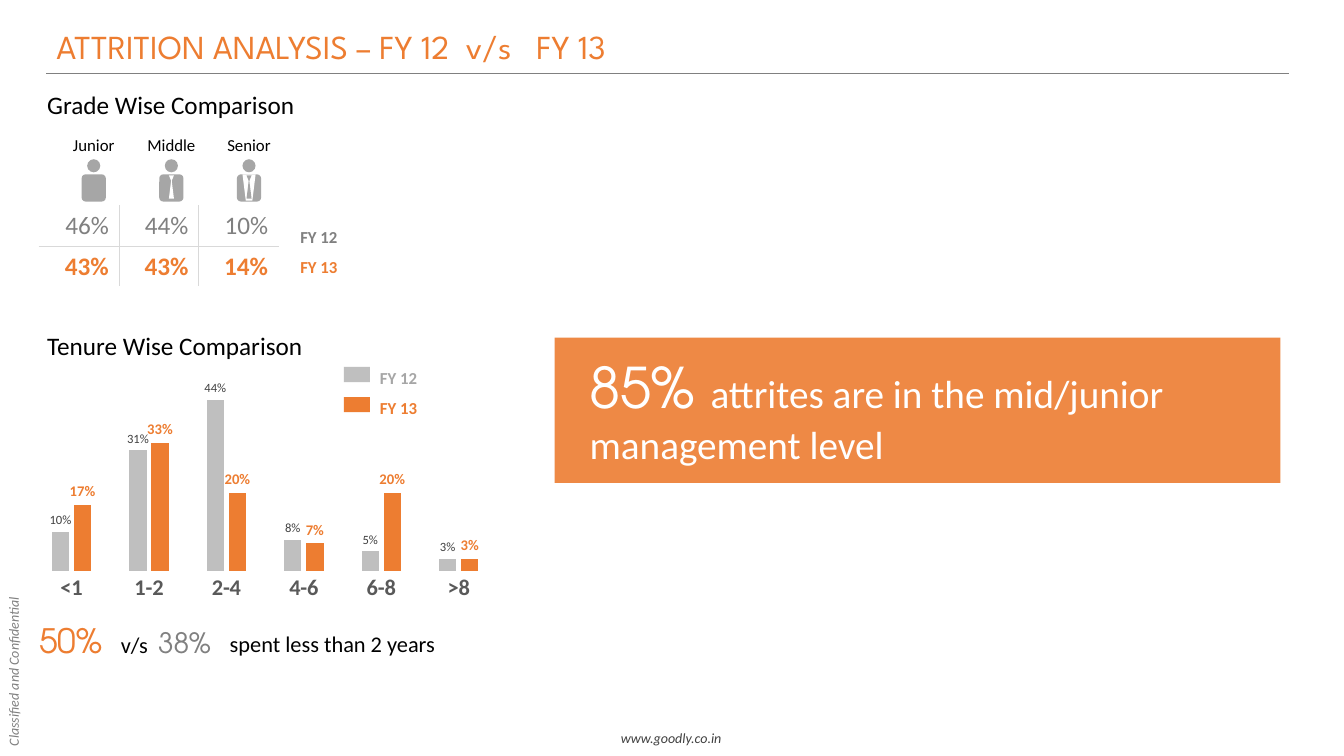
from lxml import etree
from pptx import Presentation
from pptx.chart.data import CategoryChartData
from pptx.dml.color import RGBColor
from pptx.enum.chart import XL_CHART_TYPE, XL_LABEL_POSITION, XL_TICK_MARK
from pptx.enum.shapes import MSO_CONNECTOR, MSO_SHAPE
from pptx.enum.text import MSO_ANCHOR, MSO_AUTO_SIZE, PP_ALIGN
from pptx.oxml.ns import qn
from pptx.util import Inches, Pt

ORANGE = RGBColor(0xED, 0x7D, 0x31)
GRAY = RGBColor(0x80, 0x80, 0x80)
ICON_GRAY = RGBColor(0xA6, 0xA6, 0xA6)
BAR_GRAY = RGBColor(0xBF, 0xBF, 0xBF)
RULE_GRAY = RGBColor(0xD9, 0xD9, 0xD9)
AXIS_GRAY = RGBColor(0x59, 0x59, 0x59)
DARK_GRAY = RGBColor(0x40, 0x40, 0x40)
BLACK = RGBColor(0, 0, 0)
WHITE = RGBColor(0xFF, 0xFF, 0xFF)
BODY_FONT = "Calibri"
TITLE_FONT = "League Spartan"
NUMBER_FONT = "TeX Gyre Adventor"
RECT, ROUND, OVAL = MSO_SHAPE.RECTANGLE, MSO_SHAPE.ROUNDED_RECTANGLE, MSO_SHAPE.OVAL
TRIANGLE, TRAPEZOID = MSO_SHAPE.ISOSCELES_TRIANGLE, MSO_SHAPE.TRAPEZOID
LEFT, CENTER, RIGHT = PP_ALIGN.LEFT, PP_ALIGN.CENTER, PP_ALIGN.RIGHT


def style(font, size, color, bold=False, italic=False, name=BODY_FONT):
    """Set every font property used on the slide."""
    font.size, font.name, font.bold, font.italic = Pt(size), name, bold, italic
    font.color.rgb = color


def add_tabs(para, stops):
    """Add left tab stops, in inches, to a paragraph."""
    tabs = etree.SubElement(para._p.get_or_add_pPr(), qn("a:tabLst"))
    for stop in stops:
        etree.SubElement(tabs, qn("a:tab"), pos=str(Inches(stop)), algn="l")


def add_text(slide, box, lines, size, wrap=True, align=LEFT, spacing=None, **look):
    """Add a text box with one paragraph for each (text, color) line."""
    shape = slide.shapes.add_textbox(*map(Inches, box))
    frame = shape.text_frame
    frame.word_wrap = wrap
    frame.auto_size = MSO_AUTO_SIZE.SHAPE_TO_FIT_TEXT
    for index, (text, color) in enumerate(lines):
        para = frame.add_paragraph() if index else frame.paragraphs[0]
        para.text, para.alignment = text, align
        if spacing:
            para.line_spacing = spacing
        style(para.font, size, color, **look)
    return shape


def add_spans(slide, box, spans, stops=()):
    """Add a text box whose single paragraph mixes (text, size, color, font) spans."""
    frame = slide.shapes.add_textbox(*map(Inches, box)).text_frame
    frame.word_wrap = True
    para = frame.paragraphs[0]
    if stops:
        add_tabs(para, stops)
    for text, size, color, name in spans:
        span = para.add_run()
        span.text = text
        style(span.font, size, color, name=name)


def add_solid(slide, kind, box, color, rotation=0):
    """Add a filled shape without outline or shadow."""
    shape = slide.shapes.add_shape(kind, *map(Inches, box))
    shape.shadow.inherit = False
    shape.fill.solid()
    shape.fill.fore_color.rgb = color
    shape.line.fill.background()
    shape.rotation = rotation
    return shape


def add_header(slide, box):
    """Fill the title and draw the rule below it."""
    left, top, width, height = box
    title = slide.shapes.title
    title.left, title.top = Inches(left), Inches(top)
    title.width, title.height = Inches(10.84), Inches(height)
    frame = title.text_frame
    frame.auto_size = MSO_AUTO_SIZE.NONE
    frame.vertical_anchor = MSO_ANCHOR.MIDDLE
    para = frame.paragraphs[0]
    para.text = "ATTRITION ANALYSIS – FY 12\tv/s\tFY 13"
    para.alignment, para.line_spacing = LEFT, 0.9
    add_tabs(para, (4.06, 4.76))
    style(para.font, 24, ORANGE, name=TITLE_FONT)
    rule_y = Inches(top + height + 0.02)
    rule = slide.shapes.add_connector(
        MSO_CONNECTOR.STRAIGHT, Inches(left), rule_y, Inches(left + width), rule_y)
    rule.line.color.rgb, rule.line.width = GRAY, Pt(0.5)
    etree.SubElement(rule._element.spPr, qn("a:effectLst"))


def add_footer(slide, box):
    """Add the web address and the sideways confidentiality note."""
    left, top, width, height = box
    add_text(slide, (left + 6.06, top, 1.22, height), [("www.goodly.co.in", DARK_GRAY)],
             10, wrap=False, italic=True)
    note = add_text(slide, (left - 0.71, top - 0.67, 1.69, height),
                    [("Classified and Confidential", GRAY)], 10, wrap=False, italic=True)
    note.rotation = 270


def add_person(slide, center, top, grade):
    """Draw the icon of a grade: 0 plain, 1 with tie, 2 with tie and jacket."""
    parts = [(OVAL, 0.13, 0, 0.13, ICON_GRAY, 0), (ROUND, 0.24, 0.15, 0.27, ICON_GRAY, 0)]
    if grade == 2:
        parts.append((TRAPEZOID, 0.13, 0.15, 0.26, WHITE, 180))
    if grade:
        tie = WHITE if grade == 1 else ICON_GRAY
        parts += [(TRIANGLE, 0.05, 0.19, 0.2, tie, 0), (TRIANGLE, 0.05, 0.16, 0.06, tie, 180)]
    for kind, width, drop, height, color, rotation in parts:
        add_solid(slide, kind, (center - width / 2, top + drop, width, height), color, rotation)


def set_borders(cell, row, column):
    """Draw the inner gray rules of the 2 by 3 grid and white outer edges."""
    inner = {"lnL": column > 0, "lnR": column < 2, "lnT": row > 0, "lnB": row < 1}
    for tag, is_inner in inner.items():
        line = etree.SubElement(cell._tc.get_or_add_tcPr(), qn(f"a:{tag}"),
                                w=str(Pt(0.5 if is_inner else 1)))
        fill = etree.SubElement(line, qn("a:solidFill"))
        etree.SubElement(fill, qn("a:srgbClr"), val=str(RULE_GRAY if is_inner else WHITE))


def add_grades(slide, box):
    """Add the grade comparison: heading, icons, table and row names."""
    left, top, width, height = box
    add_text(slide, (left, top, width, 0.4), [("Grade Wise Comparison", BLACK)], 18)
    for grade, name in enumerate(("Junior", "Middle", "Senior")):
        center = left + 0.56 + 0.77 * grade
        add_text(slide, (center - 0.34, top + 0.45, 0.68, 0.3), [(name, BLACK)],
                 12, wrap=False, align=CENTER)
        add_person(slide, center, top + 0.74, grade)
    rows = [(("46%", "44%", "10%"), GRAY, False), (("43%", "43%", "14%"), ORANGE, True)]
    table = slide.shapes.add_table(2, 3, Inches(left + 0.02), Inches(top + 1.2),
                                   Inches(2.37), Inches(0.8)).table
    table.first_row = table.horz_banding = False
    for row, (values, color, bold) in enumerate(rows):
        for column, value in enumerate(values):
            cell = table.cell(row, column)
            set_borders(cell, row, column)
            cell.fill.background()
            para = cell.text_frame.paragraphs[0]
            para.text, para.alignment = value, RIGHT
            style(para.font, 18, color, bold)
    add_text(slide, (left + 2.51, top + 1.26, 0.58, 0.71),
             [("FY 12", GRAY), ("FY 13", ORANGE)], 12, wrap=False, spacing=1.5, bold=True)


def add_chart(slide, box):
    """Add the clustered columns of attrition by tenure."""
    data = CategoryChartData(number_format="0%")
    data.categories = ["<1", "1-2", "2-4", "4-6", "6-8", ">8"]
    data.add_series("Series 1", (0.1, 0.31, 0.44, 0.08, 0.05, 0.03))
    data.add_series("Series 2", (0.17, 0.33, 0.2, 0.07, 0.2, 0.03))
    chart = slide.shapes.add_chart(XL_CHART_TYPE.COLUMN_CLUSTERED, *map(Inches, box), data).chart
    chart.has_legend = chart.has_title = False
    style(chart.font, 10, BLACK)
    values, names = chart.value_axis, chart.category_axis
    values.visible = values.has_major_gridlines = False
    values.minimum_scale, values.maximum_scale = 0, 0.5
    names.major_tick_mark = XL_TICK_MARK.NONE
    names.format.line.fill.background()
    style(names.tick_labels.font, 16, AXIS_GRAY, True)
    plot = chart.plots[0]
    plot.gap_width, plot.overlap, plot.vary_by_categories = 219, -27, False
    looks = [(BAR_GRAY, DARK_GRAY, 9, False), (ORANGE, ORANGE, 10.5, True)]
    for series, (fill, color, size, bold) in zip(plot.series, looks):
        series.format.fill.solid()
        series.format.fill.fore_color.rgb = fill
        labels = series.data_labels
        labels.show_value, labels.position = True, XL_LABEL_POSITION.OUTSIDE_END
        labels.number_format, labels.number_format_is_linked = "0%", False
        style(labels.font, size, color, bold)
    area = chart._chartSpace.chart.plotArea
    for old in area.findall(qn("c:layout")):
        area.remove(old)
    layout = etree.Element(qn("c:layout"))
    area.insert(0, layout)
    manual = etree.SubElement(layout, qn("c:manualLayout"))
    settings = {"layoutTarget": "inner", "xMode": "edge", "yMode": "edge",
                "x": 0.02, "y": 0.02, "w": 0.96, "h": 0.83}
    for tag, value in settings.items():
        etree.SubElement(manual, qn(f"c:{tag}"), val=str(value))


def add_tenure(slide, box):
    """Add the tenure comparison: heading, chart, legend and summary."""
    left, top, width, height = box
    add_chart(slide, (left - 0.14, top + 0.46, 4.8, 2.32))
    add_text(slide, (left, top, width, 0.4), [("Tenure Wise Comparison", BLACK)], 18)
    for index, color in enumerate((BAR_GRAY, ORANGE)):
        add_solid(slide, RECT, (left + 3.04, top + 0.41 + 0.3 * index, 0.26, 0.15), color)
    add_text(slide, (left + 3.3, top + 0.27, 0.58, 0.71),
             [("FY 12", ICON_GRAY), ("FY 13", ORANGE)], 12, wrap=False, spacing=1.5, bold=True)
    add_spans(slide, (left - 0.08, top + 2.87, 3.33, 0.5),
              [("50%\t", 24, ORANGE, NUMBER_FONT), ("v/s\t", 16, BLACK, BODY_FONT),
               ("38%", 20, GRAY, NUMBER_FONT)], stops=(0.81, 1.18))
    add_text(slide, (left + 1.81, top + 2.97, 2.29, 0.37),
             [("spent less than 2 years", BLACK)], 16)


def add_callout(slide, box):
    """Add the translucent orange panel with the key finding."""
    left, top, width, height = box
    panel = add_solid(slide, RECT, box, ORANGE)
    color = panel._element.spPr.find(qn("a:solidFill")).find(qn("a:srgbClr"))
    etree.SubElement(color, qn("a:alpha"), val="90000")
    add_spans(slide, (left + 0.25, top + 0.1, width - 0.65, height - 0.19),
              [("85% ", 40, WHITE, NUMBER_FONT),
               ("attrites are in the mid/junior management level", 28, WHITE, BODY_FONT)])


def main():
    """Build the attrition slide and save the deck."""
    deck = Presentation()
    deck.slide_width, deck.slide_height = Inches(13.33), Inches(7.5)
    page = deck.slides.add_slide(deck.slide_layouts[5])
    add_footer(page, (0, 7.19, 13.33, 0.27))
    add_header(page, (0.46, 0.25, 12.32, 0.46))
    add_grades(page, (0.37, 0.84, 3.23, 2))
    add_tenure(page, (0.37, 3.23, 3.23, 3.37))
    add_callout(page, (5.5, 3.35, 7.2, 1.44))
    deck.save("out.pptx")


if __name__ == "__main__":
    main()
